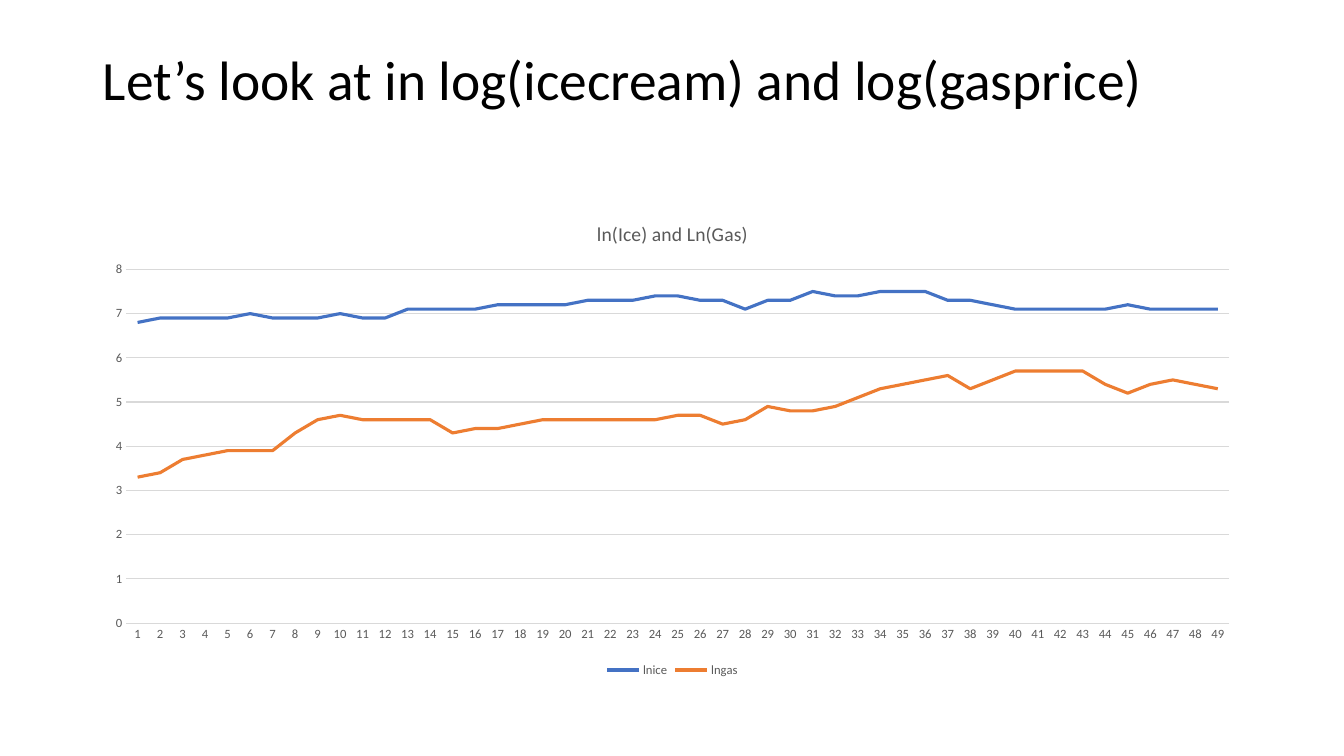
from dataclasses import dataclass

from pptx import Presentation
from pptx.chart.axis import _BaseAxis
from pptx.chart.chart import Chart
from pptx.chart.data import CategoryChartData
from pptx.dml.color import RGBColor
from pptx.enum.chart import XL_CHART_TYPE, XL_LEGEND_POSITION, XL_MARKER_STYLE, XL_TICK_MARK
from pptx.enum.text import MSO_ANCHOR, MSO_AUTO_SIZE, PP_ALIGN
from pptx.slide import Slide
from pptx.text.text import Font
from pptx.util import Inches, Pt

LINE_CHART = XL_CHART_TYPE.LINE
LEGEND_BOTTOM = XL_LEGEND_POSITION.BOTTOM
NO_MARKER = XL_MARKER_STYLE.NONE
NO_TICK = XL_TICK_MARK.NONE
ANCHOR_TOP = MSO_ANCHOR.TOP
NO_AUTOFIT = MSO_AUTO_SIZE.NONE
ALIGN_LEFT = PP_ALIGN.LEFT

FONT_NAME = "Calibri"
COLORS = {
    "title": "000000",
    "label": "595959",
    "grid": "D9D9D9",
    "ice": "4472C4",
    "gas": "ED7D31",
}
TITLE_ONLY_LAYOUT = 5
LEFT = Inches(0.92)
WIDTH = Inches(11.5)


@dataclass(frozen=True)
class LogSeries:
    name: str
    color: str
    values: tuple[float, ...]


LOG_SERIES = (
    LogSeries("lnice", "ice", (
        6.8, 6.9, 6.9, 6.9, 6.9, 7, 6.9, 6.9, 6.9, 7,
        6.9, 6.9, 7.1, 7.1, 7.1, 7.1, 7.2, 7.2, 7.2, 7.2,
        7.3, 7.3, 7.3, 7.4, 7.4, 7.3, 7.3, 7.1, 7.3, 7.3,
        7.5, 7.4, 7.4, 7.5, 7.5, 7.5, 7.3, 7.3, 7.2, 7.1,
        7.1, 7.1, 7.1, 7.1, 7.2, 7.1, 7.1, 7.1, 7.1,
    )),
    LogSeries("lngas", "gas", (
        3.3, 3.4, 3.7, 3.8, 3.9, 3.9, 3.9, 4.3, 4.6, 4.7,
        4.6, 4.6, 4.6, 4.6, 4.3, 4.4, 4.4, 4.5, 4.6, 4.6,
        4.6, 4.6, 4.6, 4.6, 4.7, 4.7, 4.5, 4.6, 4.9, 4.8,
        4.8, 4.9, 5.1, 5.3, 5.4, 5.5, 5.6, 5.3, 5.5, 5.7,
        5.7, 5.7, 5.7, 5.4, 5.2, 5.4, 5.5, 5.4, 5.3,
    )),
)


def format_font(font: Font, size: float, color: str) -> None:
    font.name = FONT_NAME
    font.size = Pt(size)
    font.bold = False
    font.color.rgb = RGBColor.from_string(COLORS[color])


def add_title(slide: Slide, text: str, *, size: float, color: str) -> None:
    title = slide.shapes.title
    title.left, title.top = LEFT, Inches(0.4)
    title.width, title.height = WIDTH, Inches(1.45)
    frame = title.text_frame
    frame.text = text
    frame.word_wrap = True
    frame.auto_size = NO_AUTOFIT
    frame.vertical_anchor = ANCHOR_TOP
    frame.margin_top = Inches(0.12)
    paragraph = frame.paragraphs[0]
    paragraph.alignment = ALIGN_LEFT
    paragraph.line_spacing = 0.9
    format_font(paragraph.runs[0].font, size, color)


def format_axis(axis: _BaseAxis) -> None:
    axis.major_tick_mark = NO_TICK
    axis.minor_tick_mark = NO_TICK
    format_font(axis.tick_labels.font, 9, "label")


def format_axes(chart: Chart) -> None:
    category_axis, value_axis = chart.category_axis, chart.value_axis
    format_axis(category_axis)
    format_axis(value_axis)
    value_axis.minimum_scale = 0
    value_axis.maximum_scale = 8
    value_axis.major_unit = 1
    value_axis.has_major_gridlines = True
    value_axis.format.line.fill.background()
    for line in (category_axis.format.line, value_axis.major_gridlines.format.line):
        line.color.rgb = RGBColor.from_string(COLORS["grid"])
        line.width = Pt(0.75)


def add_log_chart(slide: Slide, title: str) -> None:
    data = CategoryChartData()
    data.categories = [str(number + 1) for number in range(len(LOG_SERIES[0].values))]
    for log_series in LOG_SERIES:
        data.add_series(log_series.name, log_series.values)
    chart = slide.shapes.add_chart(
        LINE_CHART, LEFT, Inches(2), WIDTH, Inches(4.76), data
    ).chart
    format_font(chart.font, 10, "title")
    chart.has_title = True
    title_frame = chart.chart_title.text_frame
    title_frame.text = title
    format_font(title_frame.paragraphs[0].runs[0].font, 14, "label")
    chart.chart_title.include_in_layout = False
    chart.has_legend = True
    chart.legend.position = LEGEND_BOTTOM
    chart.legend.include_in_layout = False
    format_font(chart.legend.font, 9, "label")
    format_axes(chart)
    plot = chart.plots[0]
    plot.vary_by_categories = False
    for series, log_series in zip(plot.series, LOG_SERIES):
        series.smooth = False
        series.marker.style = NO_MARKER
        series.format.line.color.rgb = RGBColor.from_string(COLORS[log_series.color])
        series.format.line.width = Pt(2.25)


def main() -> None:
    presentation = Presentation()
    presentation.slide_width = Inches(13.33)
    presentation.slide_height = Inches(7.5)
    slide = presentation.slides.add_slide(presentation.slide_layouts[TITLE_ONLY_LAYOUT])
    add_title(
        slide, "Let’s look at in log(icecream) and log(gasprice)", size=39.6, color="title"
    )
    add_log_chart(slide, "ln(Ice) and Ln(Gas)")
    presentation.save("out.pptx")


if __name__ == "__main__":
    main()
